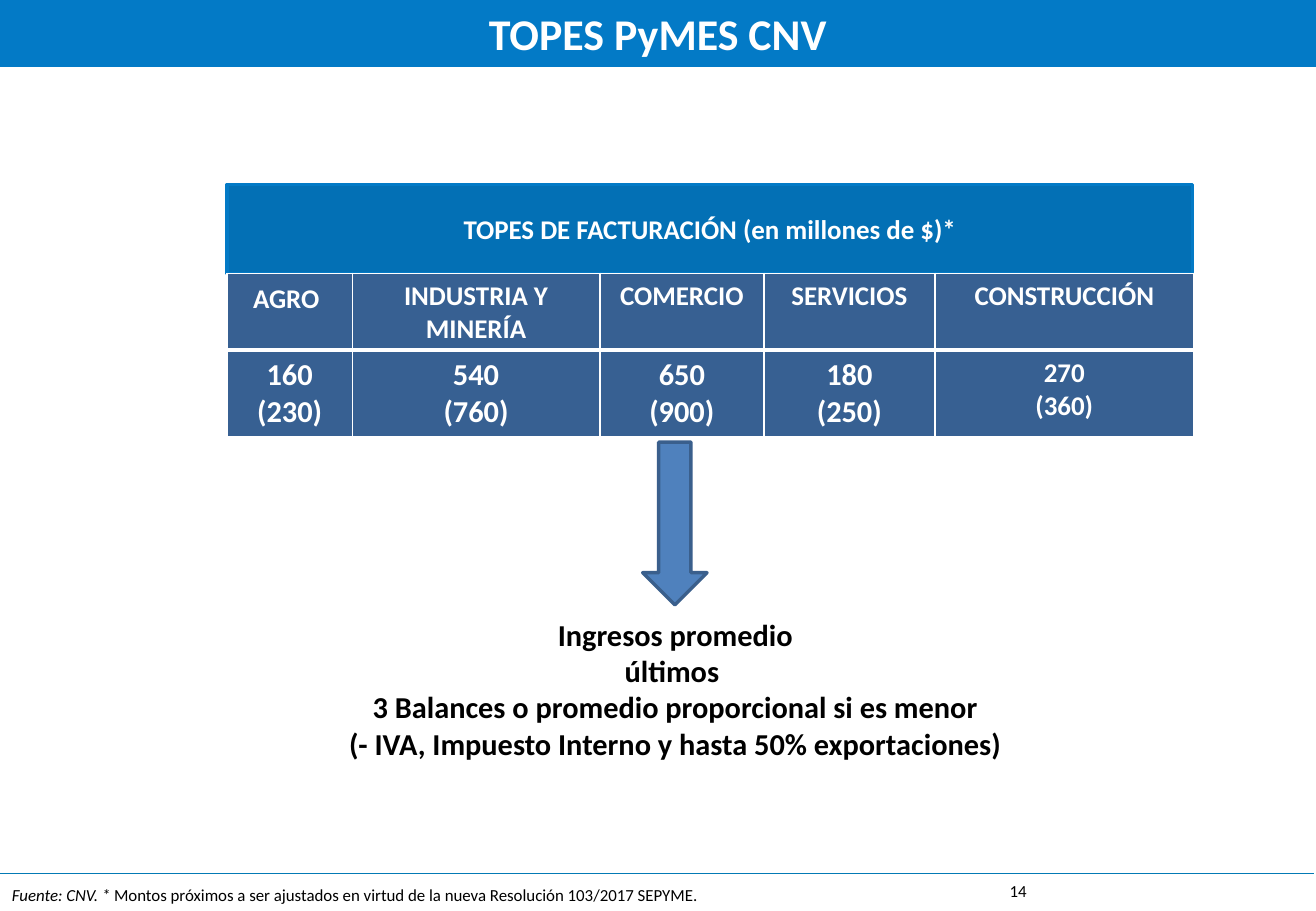
from lxml import etree
from pptx import Presentation
from pptx import util as u
from pptx.dml.color import RGBColor
from pptx.enum import shapes, text
from pptx.oxml import ns

WHITE = RGBColor(0xFF, 0xFF, 0xFF)
BLACK = RGBColor(0, 0, 0)
BRIGHT = RGBColor(0x03, 0x7A, 0xC6)
BAND = RGBColor(0x03, 0x70, 0xB5)
NAVY = RGBColor(0x37, 0x60, 0x92)
STEEL = RGBColor(0x4F, 0x81, 0xBD)
EDGE = RGBColor(0x3A, 0x5F, 0x8C)
RULE = RGBColor(0x03, 0x7A, 0xB5)

SECTORS = ["AGRO", "INDUSTRIA Y MINERÍA", "COMERCIO", "SERVICIOS", "CONSTRUCCIÓN"]
LIMITS = ["160\n(230)", "540\n(760)", "650\n(900)", "180\n(250)", "270\n(360)"]
WIDTHS = [74.2, 146.8, 97.2, 101.4, 153.4]
INCOME = [
    "Ingresos promedio",
    "últimos ",
    "3 Balances o promedio proporcional si es menor",
    "(- IVA, Impuesto Interno y hasta 50% exportaciones)",
]


class Page:
    font = "Calibri"

    def __init__(self, deck):
        self.slide = deck.slides.add_slide(deck.slide_layouts[6])
        self.items = self.slide.shapes

    def style(self, run, size, color, bold=False, italic=False):
        font = run.font
        font.name, font.size = self.font, u.Pt(size)
        font.bold, font.italic = bold, italic
        font.color.rgb = color

    def put(self, frame, words, size, color, bold=False, center=True):
        """Fill a text frame and format its runs."""
        frame.text = words
        for para in frame.paragraphs:
            para.alignment = text.PP_ALIGN.CENTER if center else text.PP_ALIGN.LEFT
            for run in para.runs:
                self.style(run, size, color, bold)

    def label(self, box, words, size, bold=False, center=True):
        frame = self.items.add_textbox(*map(u.Pt, box)).text_frame
        frame.word_wrap = True
        self.put(frame, words, size, BLACK, bold, center)
        return frame

    def shape(self, kind, box, fill, line=None):
        item = self.items.add_shape(kind, *map(u.Pt, box))
        item.shadow.inherit = False
        item.fill.solid()
        item.fill.fore_color.rgb = fill
        if line is None:
            item.line.fill.background()
        else:
            item.line.color.rgb = line
            item.line.width = u.Pt(2)
        return item

    def banner(self, box, words, size, fill, line=None):
        item = self.shape(shapes.MSO_SHAPE.RECTANGLE, box, fill, line)
        item.text_frame.vertical_anchor = text.MSO_ANCHOR.MIDDLE
        self.put(item.text_frame, words, size, WHITE, True)

    def rule(self, left, right, top):
        line = self.items.add_connector(
            shapes.MSO_CONNECTOR.STRAIGHT, *map(u.Pt, (left, top, right, top)))
        line.line.color.rgb = RULE
        line.line.width = u.Pt(0.75)
        etree.SubElement(line._element.spPr, ns.qn("a:effectLst"))

    def border(self, cell, top, bottom):
        props = cell._tc.get_or_add_tcPr()
        for side, width in zip("LRTB", (1, 1, top, bottom)):
            edge = etree.SubElement(props, ns.qn("a:ln" + side), w=str(u.Pt(width)))
            fill = etree.SubElement(edge, ns.qn("a:solidFill"))
            etree.SubElement(fill, ns.qn("a:srgbClr"), val=str(WHITE))

    def table(self, left, top, widths, heights, rows, sizes):
        """Draw a grid whose first row is closed by a thick line."""
        box = left, top, sum(widths), sum(heights)
        grid = self.items.add_table(len(rows), len(widths), *map(u.Pt, box)).table
        for col, width in zip(grid.columns, widths):
            col.width = u.Pt(width)
        for r, row in enumerate(rows):
            grid.rows[r].height = u.Pt(heights[r])
            for c, words in enumerate(row):
                cell = grid.cell(r, c)
                self.border(cell, 3 if r else 1, 1 if r else 3)
                cell.fill.solid()
                cell.fill.fore_color.rgb = NAVY
                self.put(cell.text_frame, words, sizes[r][c], WHITE, True)
        return grid


def main():
    deck = Presentation()
    deck.slide_width, deck.slide_height = u.Pt(780), u.Pt(540)
    page = Page(deck)

    page.label((554.4, 518.4, 98, 19.4), "14", 10)
    page.rule(-0.7, 779, 517.7)
    page.banner((0, 0, 780, 39.6), "TOPES PyMES CNV", 26, BRIGHT)
    page.label((195.1, 361.4, 410.4, 116.6), "\n".join(INCOME), 18, True)
    page.shape(shapes.MSO_SHAPE.DOWN_ARROW, (380.9, 262.1, 38.2, 96.5), STEEL, EDGE)

    source = page.label((0, 520.6, 566, 31.7), "Fuente: CNV. * ", 10, center=False)
    para = source.paragraphs[0]
    para.runs[0].font.italic = True
    note = para.add_run()
    note.text = "Montos próximos a ser ajustados en virtud de la nueva Resolución 103/2017 SEPYME."
    page.style(note, 10, BLACK)

    page.banner((134.6, 109.4, 572.4, 52.6),
                "TOPES DE FACTURACIÓN (en millones de $)*", 16, BAND, BRIGHT)
    grid = page.table(134.6, 162, WIDTHS, [45, 51], [SECTORS, LIMITS],
                      [[16] * 5, [18] * 4 + [16]])
    space = grid.cell(0, 0).text_frame.paragraphs[0].add_run()
    space.text = " "
    page.style(space, 18, WHITE, True)

    deck.save("out.pptx")


if __name__ == "__main__":
    main()
